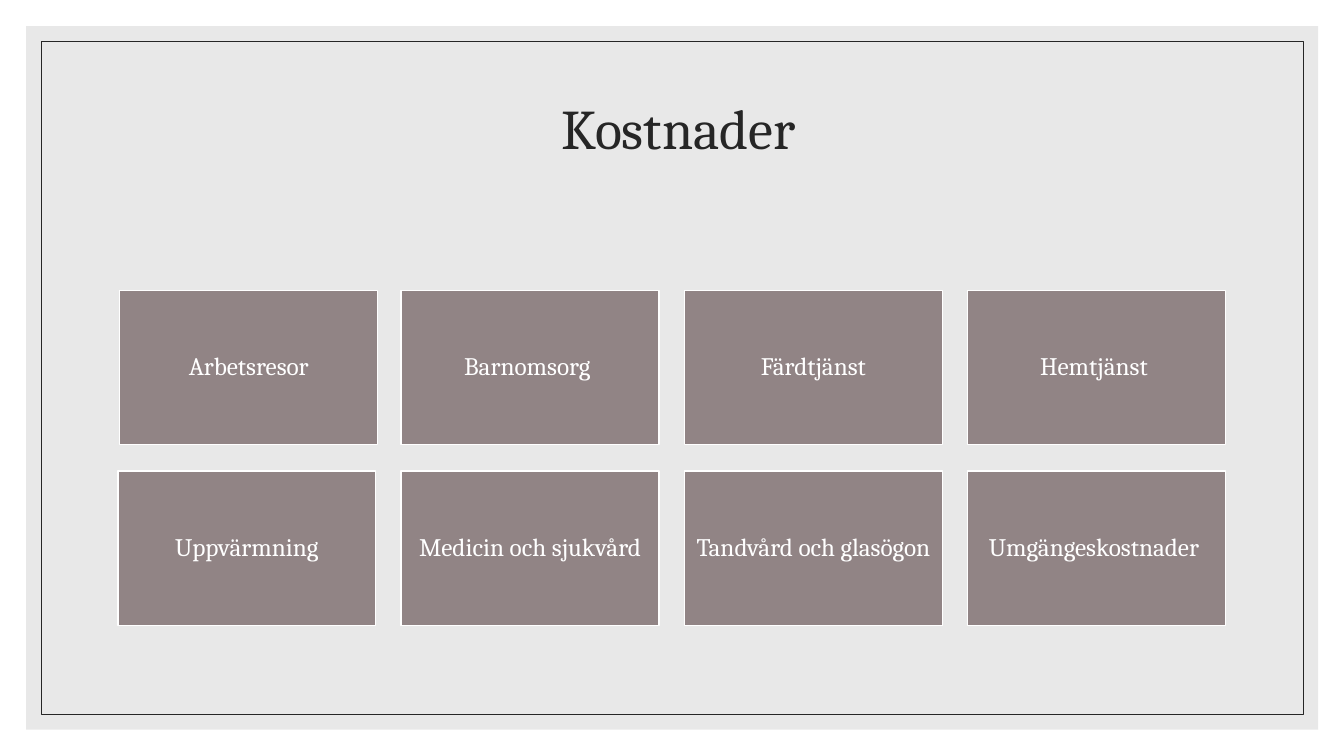
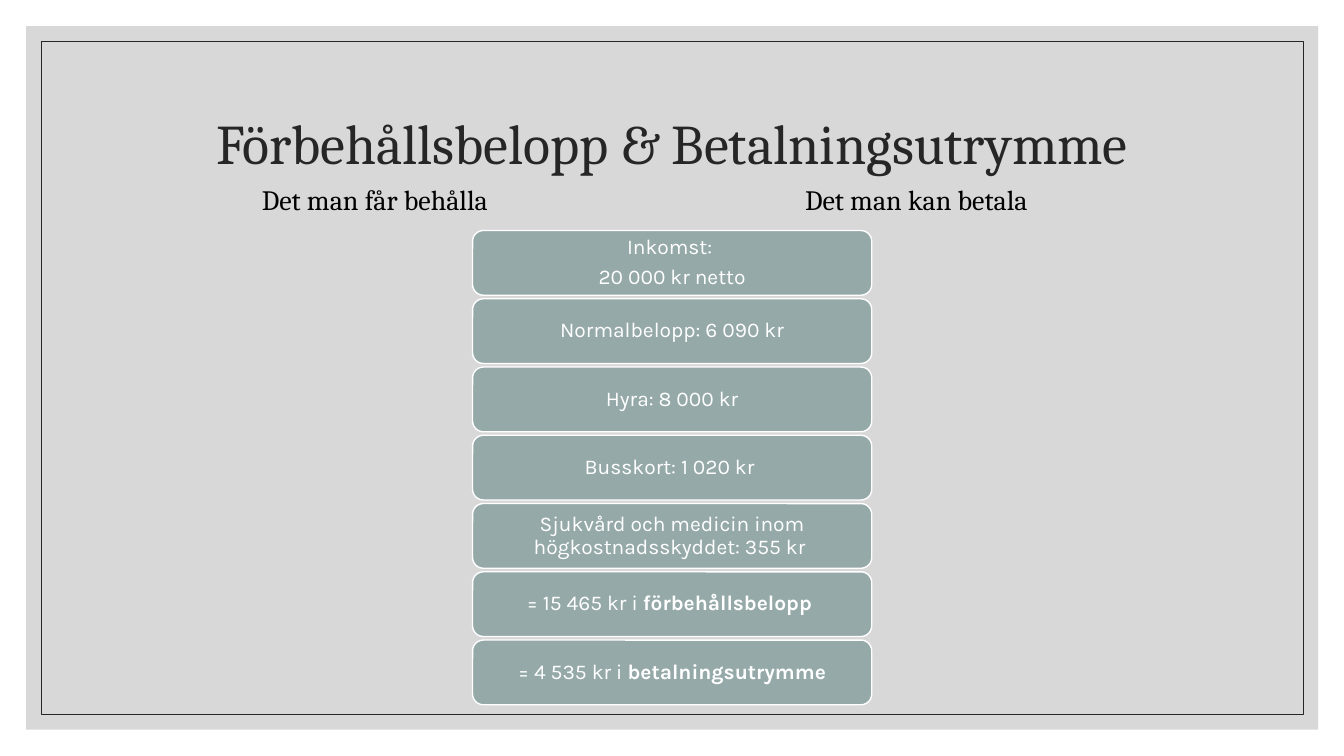
from dataclasses import dataclass

from lxml.etree import SubElement
from pptx import Presentation
from pptx.dml.color import RGBColor
from pptx.enum.shapes import MSO_SHAPE
from pptx.enum.text import MSO_ANCHOR, MSO_AUTO_SIZE, PP_ALIGN
from pptx.oxml.ns import qn
from pptx.util import Cm, Pt

# Shared look
WHITE, BLACK, INK = "FFFFFF", "000000", "262626"
LIGHT_PANEL, DARK_PANEL = "D9D9D9", "BFBFBF"
TAUPE, SAGE = "918485", "96A9A9"
SERIF, SANS = "Cambria", "Karla"
TITLE_ONLY = 5


@dataclass(frozen=True)
class Area:
    """A rectangle in centimetres."""
    left: float
    top: float
    width: float
    height: float

    def lengths(self) -> tuple:
        return Cm(self.left), Cm(self.top), Cm(self.width), Cm(self.height)


@dataclass(frozen=True)
class TextStyle:
    font: str
    size: float
    color: str
    align: PP_ALIGN = PP_ALIGN.CENTER
    line_spacing: float = 0.9
    paragraph_gap: float = 0


@dataclass(frozen=True)
class Span:
    text: str
    bold: bool = False


@dataclass(frozen=True)
class CardStyle:
    shape: MSO_SHAPE
    fill: str
    text: TextStyle
    side_margin: float
    end_margin: float


@dataclass(frozen=True)
class Cost:
    label: str
    nudge: float = 0


@dataclass(frozen=True)
class Caption:
    text: str
    area: Area


PANEL = Area(0.66, 0.66, 32.56, 17.73)
FRAME = Area(1.04, 1.04, 31.8, 16.97)
TITLE_STYLE = TextStyle(SERIF, 40, INK)
CAPTION_STYLE = TextStyle(SERIF, 20, BLACK, PP_ALIGN.LEFT, 1)
COST_CARD = CardStyle(MSO_SHAPE.RECTANGLE, TAUPE,
                      TextStyle(SERIF, 18, WHITE), 0.18, 0.18)
STEP_CARD = CardStyle(MSO_SHAPE.ROUNDED_RECTANGLE, SAGE,
                      TextStyle(SANS, 15, WHITE, paragraph_gap=5.25), 0.15, 0.08)

# Cost tiles: four columns
COST_COLUMNS = 4
FIRST_COST = Area(2.97, 7.32, 6.5, 3.89)
COST_PITCH_X, COST_PITCH_Y = 7.14, 4.55
COSTS = [
    Cost("Arbetsresor", 0.05), Cost("Barnomsorg "),
    Cost("Färdtjänst"), Cost("Hemtjänst "),
    Cost("Uppvärmning"), Cost("Medicin och sjukvård"),
    Cost("Tandvård och glasögon"), Cost("Umgängeskostnader "),
]

# Calculation steps: one column, each step a list of paragraphs
FIRST_STEP = Area(11.91, 5.81, 10.06, 1.63)
STEP_PITCH = 1.72
STEPS = [
    [[Span("Inkomst: ")], [Span("20 000 kr netto")]],
    [[Span("Normalbelopp: 6 090 kr")]],
    [[Span("Hyra: 8 000 kr")]],
    [[Span("Busskort: 1 020 kr ")]],
    [[Span("Sjukvård och medicin inom högkostnadsskyddet: 355 kr ")]],
    [[Span("= 15 465 kr i "), Span("förbehållsbelopp ", True)]],
    [[Span("= 4 535 kr i "), Span("betalningsutrymme", True)]],
]
CAPTIONS = [
    Caption("Det man får behålla", Area(6.35, 4.48, 7.47, 1.12)),
    Caption("Det man kan betala", Area(20.04, 4.48, 7.11, 1.12)),
]


def rgb(value: str) -> RGBColor:
    return RGBColor.from_string(value)


def write(frame, paragraphs: list[list[Span]], style: TextStyle) -> None:
    """Fill a text frame run by run."""
    frame.word_wrap = True
    for index, spans in enumerate(paragraphs):
        para = frame.add_paragraph() if index else frame.paragraphs[0]
        para.alignment = style.align
        para.line_spacing = style.line_spacing
        para.space_before = Pt(style.paragraph_gap if index else 0)
        for span in spans:
            run = para.add_run()
            run.text = span.text
            run.font.name = style.font
            run.font.size = Pt(style.size)
            run.font.bold = span.bold
            run.font.color.rgb = rgb(style.color)


def add_box(page, shape: MSO_SHAPE, area: Area, fill: str | None = None,
            line: str | None = None, line_width: float = 1):
    box = page.shapes.add_shape(shape, *area.lengths())
    box.shadow.inherit = False
    if fill:
        box.fill.solid()
        box.fill.fore_color.rgb = rgb(fill)
    else:
        box.fill.background()
    if line:
        box.line.color.rgb = rgb(line)
        box.line.width = Pt(line_width)
    else:
        box.line.fill.background()
    return box


def add_card(page, area: Area, paragraphs: list[list[Span]], style: CardStyle) -> None:
    box = add_box(page, style.shape, area, style.fill, WHITE)
    frame = box.text_frame
    frame.margin_left = frame.margin_right = Cm(style.side_margin)
    frame.margin_top = frame.margin_bottom = Cm(style.end_margin)
    frame.vertical_anchor = MSO_ANCHOR.MIDDLE
    write(frame, paragraphs, style.text)


def add_caption(page, caption: Caption) -> None:
    box = page.shapes.add_textbox(*caption.area.lengths())
    write(box.text_frame, [[Span(caption.text)]], CAPTION_STYLE)
    box.text_frame.auto_size = MSO_AUTO_SIZE.SHAPE_TO_FIT_TEXT


def add_page(deck, title_text: str, title_area: Area, panel_color: str):
    """Add a page with tinted panel, thin frame and title."""
    page = deck.slides.add_slide(deck.slide_layouts[TITLE_ONLY])
    page.background.fill.solid()
    page.background.fill.fore_color.rgb = rgb(WHITE)
    panel = add_box(page, MSO_SHAPE.RECTANGLE, PANEL, panel_color)
    color = panel.element.spPr.find(qn("a:solidFill"))[0]
    SubElement(color, qn("a:alpha")).set("val", "60000")
    add_box(page, MSO_SHAPE.RECTANGLE, FRAME, line=INK, line_width=0.5)

    title = page.shapes.title
    title.left, title.top, title.width, title.height = title_area.lengths()
    title.text_frame.auto_size = MSO_AUTO_SIZE.NONE
    title.text_frame.vertical_anchor = MSO_ANCHOR.MIDDLE
    write(title.text_frame, [[Span(title_text)]], TITLE_STYLE)
    # Lift the title above the panel
    title.element.getparent().append(title.element)
    return page


def build_costs(deck) -> None:
    page = add_page(deck, "Kostnader ", Area(3.28, 1.4, 27.94, 3.81), LIGHT_PANEL)
    for index, cost in enumerate(COSTS):
        row, column = divmod(index, COST_COLUMNS)
        area = Area(FIRST_COST.left + column * COST_PITCH_X + cost.nudge,
                    FIRST_COST.top + row * COST_PITCH_Y,
                    FIRST_COST.width, FIRST_COST.height)
        add_card(page, area, [[Span(cost.label)]], COST_CARD)


def build_calculation(deck) -> None:
    page = add_page(deck, "Förbehållsbelopp & Betalningsutrymme",
                    Area(2.97, 1.78, 27.94, 3.81), DARK_PANEL)
    for index, paragraphs in enumerate(STEPS):
        area = Area(FIRST_STEP.left, FIRST_STEP.top + index * STEP_PITCH,
                    FIRST_STEP.width, FIRST_STEP.height)
        add_card(page, area, paragraphs, STEP_CARD)
    for caption in CAPTIONS:
        add_caption(page, caption)


def main() -> None:
    deck = Presentation()
    deck.slide_width, deck.slide_height = Cm(33.87), Cm(19.05)
    build_costs(deck)
    build_calculation(deck)
    deck.save("out.pptx")


if __name__ == "__main__":
    main()
